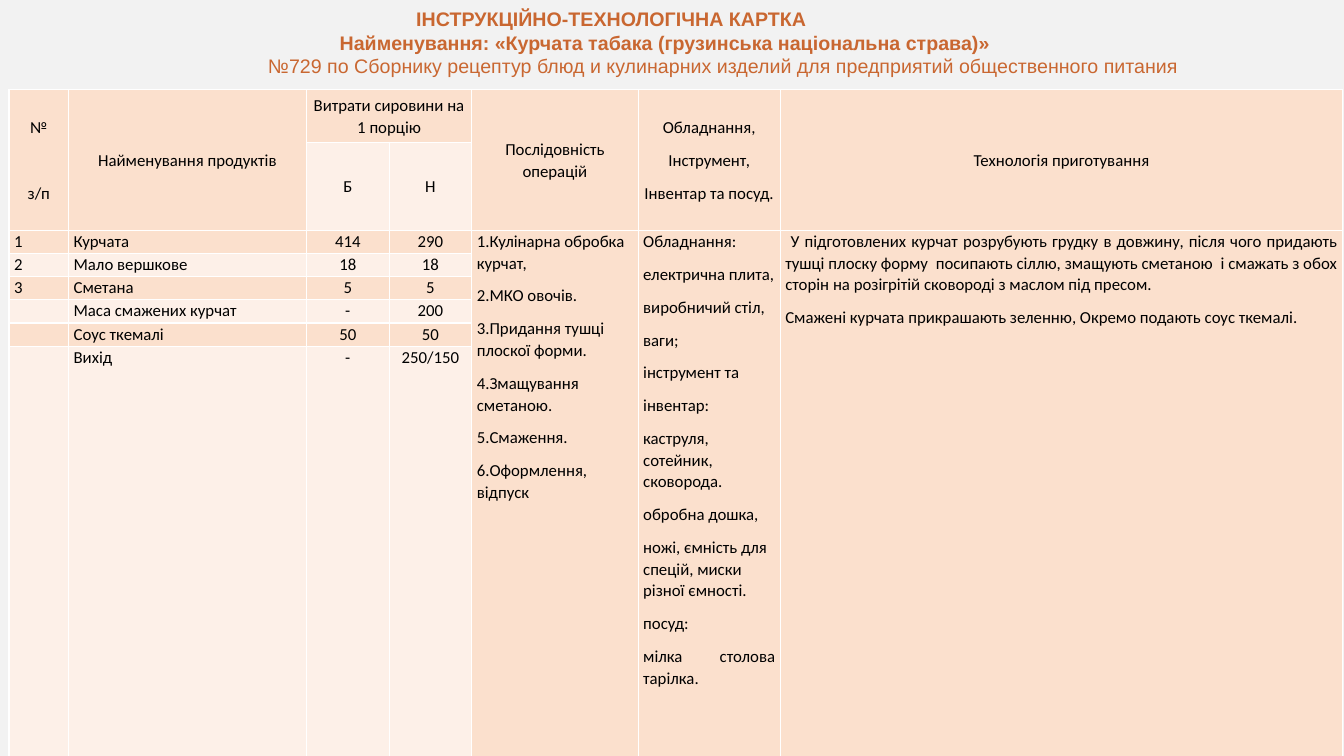
from dataclasses import dataclass

from lxml import etree
from pptx import Presentation
from pptx import util as u
from pptx.dml.color import RGBColor
from pptx.enum import text
from pptx.oxml import ns

LEFT, CENTER, JUSTIFY = text.PP_ALIGN.LEFT, text.PP_ALIGN.CENTER, text.PP_ALIGN.JUSTIFY


@dataclass(frozen=True)
class Theme:
    background: str = "F2F2F2"
    title: str = "C96731"
    body: str = "000000"
    border: str = "FFFFFF"
    bands: tuple[str, str] = ("FBE0CD", "FDF0E8")
    title_font: str = "Arial"
    body_font: str = "Calibri"
    title_size: int = 14
    body_size: int = 12


@dataclass(frozen=True)
class TitleLine:
    text: str
    indent: float
    bold: bool = True


@dataclass(frozen=True)
class CardCell:
    row: int
    col: int
    lines: tuple[str, ...]
    rows: int = 1
    cols: int = 1
    align: text.PP_ALIGN = LEFT
    before: int = 0
    justify_from: int = 99


THEME = Theme()
COLUMNS = (0.59, 2.36, 0.82, 0.82, 1.65, 1.41, 5.58)
HEADER_ROWS = 2
ROWS = (0.52, 0.66, *[0.23] * 5, 4.15)

TITLE = (
    TitleLine("ІНСТРУКЦІЙНО-ТЕХНОЛОГІЧНА КАРТКА", 1.73),
    TitleLine("Найменування: «Курчата табака (грузинська національна страва)»", 0.97),
    TitleLine("№729 по Сборнику рецептур блюд и кулинарних изделий для предприятий "
              "общественного питания", 0.26, bold=False),
)
HEADERS = (
    CardCell(0, 0, ("№", "з/п"), rows=2, align=CENTER, before=24),
    CardCell(0, 1, ("Найменування продуктів",), rows=2, align=CENTER, before=10),
    CardCell(0, 2, ("Витрати сировини на 1 порцію",), cols=2, align=CENTER),
    CardCell(0, 4, ("Послідовність операцій",), rows=2, align=CENTER),
    CardCell(0, 5, ("Обладнання,", "Інструмент,", "Інвентар та посуд."), rows=2, align=CENTER),
    CardCell(0, 6, ("Технологія приготування",), rows=2, align=CENTER, before=24),
    CardCell(1, 2, ("Б",), align=CENTER, before=10),
    CardCell(1, 3, ("Н",), align=CENTER, before=10),
)
PRODUCTS = (
    ("1", "Курчата", "414", "290"),
    ("2", "Мало вершкове", "18", "18"),
    ("3", "Сметана", "5", "5"),
    ("", "Маса смажених курчат", "-", "200"),
    ("", "Соус ткемалі", "50", "50"),
    ("", "Вихід", "-", "250/150"),
)
DETAILS = (
    CardCell(2, 4, (
        "1.Кулінарна обробка курчат,", "2.МКО овочів.", "3.Придання тушці плоскої форми.",
        "4.Змащування сметаною.", "5.Смаження.", "6.Оформлення, відпуск",
    ), rows=6),
    CardCell(2, 5, (
        "Обладнання:", "електрична плита,", "виробничий стіл,", "ваги;", "інструмент та",
        "інвентар:", "каструля, сотейник, сковорода.", "обробна дошка,",
        "ножі, ємність для спецій, миски різної ємності.", "посуд:", "мілка столова тарілка.",
    ), rows=6, justify_from=9),
    CardCell(2, 6, (
        " У підготовлених курчат розрубують грудку в довжину, після чого придають тушці "
        "плоску форму  посипають сіллю, змащують сметаною  і смажать з обох сторін на "
        "розігрітій сковороді з маслом під пресом.",
        "Смажені курчата прикрашають зеленню, Окремо подають соус ткемалі.",
    ), rows=6, justify_from=0),
)


def add_text(tf, content: str, *, font: str, size: int, color: str, bold: bool = False,
             align: text.PP_ALIGN = LEFT, indent: float = 0, spacing: float = 1.0,
             before: int = 0, after: int = 0) -> None:
    p = tf.paragraphs[0] if not tf.paragraphs[0].runs else tf.add_paragraph()
    p.alignment = align
    p.line_spacing = spacing
    p.space_before, p.space_after = u.Pt(before), u.Pt(after)
    if indent:
        p._p.get_or_add_pPr().set("indent", str(u.Inches(indent)))
    if not content:
        etree.SubElement(p._p, ns.qn("a:endParaRPr"), sz=str(size * 100))
        return
    r = p.add_run()
    r.text = content
    r.font.name, r.font.size, r.font.bold = font, u.Pt(size), bold
    r.font.color.rgb = RGBColor.from_string(color)


def style_cell(cell, fill: str) -> None:
    tc_pr = cell._tc.get_or_add_tcPr()
    for side in ("lnL", "lnR", "lnT", "lnB"):
        line = etree.SubElement(tc_pr, ns.qn(f"a:{side}"), w=str(u.Pt(1)))
        solid = etree.SubElement(line, ns.qn("a:solidFill"))
        etree.SubElement(solid, ns.qn("a:srgbClr"), val=THEME.border)
    cell.fill.solid()
    cell.fill.fore_color.rgb = RGBColor.from_string(fill)
    cell.margin_left = cell.margin_right = u.Inches(0.05)
    cell.margin_top = cell.margin_bottom = 0


def fill_cell(table, item: CardCell) -> None:
    cell = table.cell(item.row, item.col)
    if item.rows * item.cols > 1:
        cell.merge(table.cell(item.row + item.rows - 1, item.col + item.cols - 1))
    is_header = item.row < HEADER_ROWS
    cell.vertical_anchor = text.MSO_ANCHOR.MIDDLE if is_header else text.MSO_ANCHOR.TOP
    for i, line in enumerate(item.lines):
        add_text(cell.text_frame, line, font=THEME.body_font, size=THEME.body_size,
                 color=THEME.body, align=JUSTIFY if i >= item.justify_from else item.align,
                 spacing=1.06, before=item.before, after=8)


def add_card(slide) -> None:
    frame = slide.shapes.add_table(len(ROWS), len(COLUMNS), u.Inches(0.09), u.Inches(0.89),
                                   u.Inches(sum(COLUMNS)), u.Inches(sum(ROWS)))
    table = frame.table
    table.first_row = table.horz_banding = False
    for column, width in zip(table.columns, COLUMNS):
        column.width = u.Inches(width)
    for i, (row, height) in enumerate(zip(table.rows, ROWS)):
        row.height = u.Inches(height)
        for cell in row.cells:
            style_cell(cell, THEME.bands[i % 2])
    products = [
        CardCell(i, j, (value,), align=LEFT if j < 2 else CENTER)
        for i, product in enumerate(PRODUCTS, HEADER_ROWS)
        for j, value in enumerate(product)
    ]
    for item in (*HEADERS, *products, *DETAILS):
        fill_cell(table, item)


def add_title(slide) -> None:
    sp = slide.shapes.add_textbox(u.Inches(2.3), 0, u.Inches(9.76), u.Inches(1.11))
    tf = sp.text_frame
    tf.word_wrap = True
    tf.vertical_anchor = text.MSO_ANCHOR.TOP
    tf.margin_top = u.Inches(0.07)
    for line in TITLE:
        add_text(tf, line.text, font=THEME.title_font, size=THEME.title_size,
                 color=THEME.title, bold=line.bold, indent=line.indent)


def main() -> None:
    prs = Presentation()
    prs.slide_width, prs.slide_height = u.Inches(13.33), u.Inches(7.5)
    slide = prs.slides.add_slide(prs.slide_layouts[6])
    slide.background.fill.solid()
    slide.background.fill.fore_color.rgb = RGBColor.from_string(THEME.background)
    add_card(slide)
    add_title(slide)
    prs.save("out.pptx")


if __name__ == "__main__":
    main()
